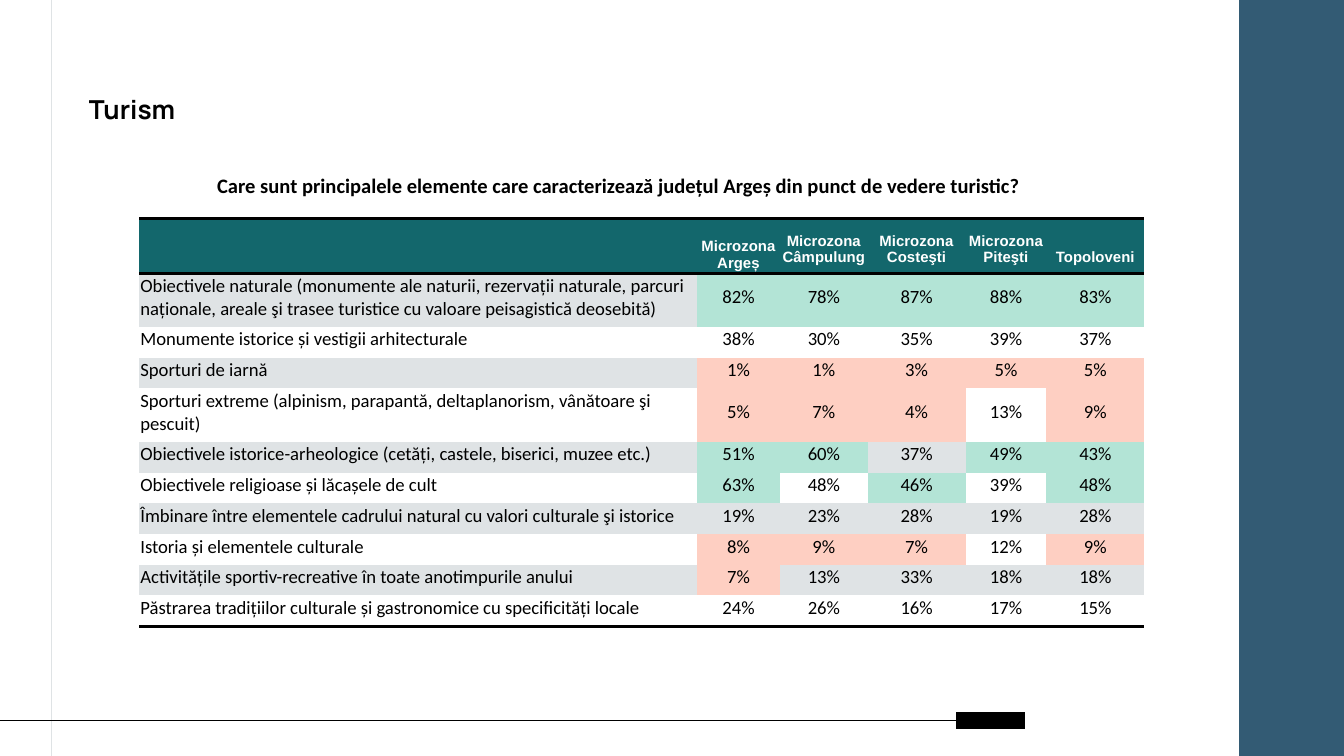
from typing import NamedTuple

from lxml.etree import SubElement
from pptx import Presentation
from pptx.dml.color import RGBColor
from pptx.enum.shapes import MSO_CONNECTOR as Connector, MSO_SHAPE as Shape
from pptx.enum.text import MSO_ANCHOR as Anchor, PP_ALIGN as Align
from pptx.oxml import parse_xml
from pptx.oxml.ns import nsdecls, qn
from pptx.util import Inches, Pt

GRID_COLUMNS, GRID_ROWS = 100, 56.25
BLACK, WHITE = "000000", "FFFFFF"
TEAL, GREY, GREEN, RED = "13676C", "DFE3E5", "B3E4D6", "FECFC2"
NO_STYLE = "{2D5ABB26-0587-4C30-8999-92F81FD0307C}"
LOW_LIMIT = 10


class Area(NamedTuple):
    left: float
    top: float
    width: float
    height: float


class Zone(NamedTuple):
    name: str
    columns: float
    high_limit: int
    bottom_inset: float = 0.55


class Answer(NamedTuple):
    label: str
    percents: tuple[int, ...]
    rows: float = 2.28


class Rule(NamedTuple):
    start: tuple[float, float]
    end: tuple[float, float]
    color: str
    width: float = 0.75


LABEL_COLUMNS, HEADER_ROWS = 41.5, 4.1
ZONES = [
    Zone("Microzona Argeș", 6.2, 50, bottom_inset=0.15),
    Zone("Microzona Câmpulung", 6.5, 50),
    Zone("Microzona Costeşti", 7.3, 40),
    Zone("Microzona Piteşti", 6, 40),
    Zone("Topoloveni", 7.3, 40),
]
ANSWERS = [
    Answer("Obiectivele naturale (monumente ale naturii, rezervații naturale, parcuri naționale, "
           "areale şi trasee turistice cu valoare peisagistică deosebită)", (82, 78, 87, 88, 83), 3.9),
    Answer("Monumente istorice și vestigii arhitecturale", (38, 30, 35, 39, 37)),
    Answer("Sporturi de iarnă", (1, 1, 3, 5, 5)),
    Answer("Sporturi extreme (alpinism, parapantă, deltaplanorism, vânătoare şi pescuit)",
           (5, 7, 4, 13, 9), 3.9),
    Answer("Obiectivele istorice-arheologice (cetăți, castele, biserici, muzee etc.)", (51, 60, 37, 49, 43)),
    Answer("Obiectivele religioase și lăcașele de cult", (63, 48, 46, 39, 48)),
    Answer("Îmbinare între elementele cadrului natural cu valori culturale şi istorice", (19, 23, 28, 19, 28)),
    Answer("Istoria și elementele culturale", (8, 9, 7, 12, 9)),
    Answer("Activitățile sportiv-recreative în toate anotimpurile anului", (7, 13, 33, 18, 18)),
    Answer("Păstrarea tradițiilor culturale și gastronomice cu specificități locale", (24, 26, 16, 17, 15)),
]
RULES = [
    Rule((3.83, -0.4), (3.83, 56.6), GREY),
    Rule((76.25, 53.6), (71.15, 53.6), BLACK, 9),
    Rule((71.15, 53.6), (-0.9, 53.6), BLACK),
]


def grid(cells: float) -> int:
    """Turn a number of grid cells into a slide length."""
    return Inches(cells / 10)


def rgb(color: str) -> RGBColor:
    """Turn a hex string into a colour."""
    return RGBColor.from_string(color)


def write(frame, text: str, *, size: float, font: str = "Calibri", color: str = BLACK,
          bold: bool = False, align=Align.LEFT) -> None:
    """Put one formatted paragraph into a text frame."""
    para = frame.paragraphs[0]
    para.alignment = align
    span = para.add_run()
    span.text = text
    span.font.size, span.font.name, span.font.bold = Pt(size), font, bold
    span.font.color.rgb = rgb(color)


def add_text(page, area: Area, text: str, inset: float = 0.5, **style) -> None:
    """Add a wrapping text box with equal top and bottom insets."""
    box = page.shapes.add_textbox(*map(grid, area))
    frame = box.text_frame
    frame.word_wrap = True
    frame.margin_top = frame.margin_bottom = grid(inset)
    write(frame, text, **style)


def add_rule(page, rule: Rule) -> None:
    """Draw a straight line without a shadow."""
    line = page.shapes.add_connector(Connector.STRAIGHT, *map(grid, rule.start + rule.end))
    line.line.color.rgb = rgb(rule.color)
    line.line.width = Pt(rule.width)
    SubElement(line.element.spPr, qn("a:effectLst"))


def add_band(page, area: Area, color: str) -> None:
    """Draw a plain filled rectangle."""
    band = page.shapes.add_shape(Shape.RECTANGLE, *map(grid, area))
    band.shadow.inherit = False
    band.fill.solid()
    band.fill.fore_color.rgb = rgb(color)
    band.line.fill.background()


def fill_cell(cell, text: str, *, fill: str, anchor=Anchor.MIDDLE, bottom: float = 0.5,
              borders: tuple[str, ...] = (), **style) -> None:
    """Format one table cell, with borders on the named sides."""
    cell.fill.solid()
    cell.fill.fore_color.rgb = rgb(fill)
    cell.vertical_anchor = anchor
    cell.margin_left = cell.margin_right = cell.margin_top = grid(0.1)
    cell.margin_bottom = grid(bottom)
    if text:
        write(cell.text_frame, text, **style)
    for index, side in enumerate(borders):
        cell._tc.get_or_add_tcPr().insert(index, parse_xml(
            f'<a:{side} {nsdecls("a")} w="{Pt(2)}"><a:solidFill><a:srgbClr val="{BLACK}"/>'
            f'</a:solidFill></a:{side}>'))


def tone(percent: int, zone: Zone, stripe: str) -> str:
    """Choose the fill that marks a low, high or ordinary share."""
    if percent < LOW_LIMIT:
        return RED
    return GREEN if percent >= zone.high_limit else stripe


def add_answers(page, left: float, top: float) -> None:
    """Add the table of answers by zone."""
    widths = [LABEL_COLUMNS, *(zone.columns for zone in ZONES)]
    heights = [HEADER_ROWS, *(answer.rows for answer in ANSWERS)]
    area = Area(left, top, sum(widths), sum(heights))
    holder = page.shapes.add_table(len(heights), len(widths), *map(grid, area))
    table = holder.table
    table.first_row = table.horz_banding = False
    for style in holder.element.iter(qn("a:tableStyleId")):
        style.text = NO_STYLE
    for column, width in zip(table.columns, widths):
        column.width = grid(width)
    for row, height in zip(table.rows, heights):
        row.height = grid(height)

    fill_cell(table.cell(0, 0), "", fill=TEAL, borders=("lnT", "lnB"))
    for column, zone in enumerate(ZONES, 1):
        fill_cell(table.cell(0, column), zone.name, fill=TEAL, anchor=Anchor.BOTTOM,
                  bottom=zone.bottom_inset, borders=("lnT", "lnB"), size=8, font="Arial",
                  color=WHITE, bold=True, align=Align.CENTER)
    for row, answer in enumerate(ANSWERS, 1):
        stripe = GREY if row % 2 else WHITE
        borders = ("lnB",) if row == len(ANSWERS) else ()
        fill_cell(table.cell(row, 0), answer.label, fill=stripe, anchor=Anchor.BOTTOM,
                  borders=borders, size=10)
        for column, (zone, percent) in enumerate(zip(ZONES, answer.percents), 1):
            fill_cell(table.cell(row, column), f"{percent}%", fill=tone(percent, zone, stripe),
                      borders=borders, size=10, align=Align.CENTER)


def main() -> None:
    """Build and save the deck."""
    deck = Presentation()
    deck.slide_width, deck.slide_height = grid(GRID_COLUMNS), grid(GRID_ROWS)
    page = deck.slides.add_slide(deck.slide_layouts[6])
    add_band(page, Area(92.2, 0, 7.8, GRID_ROWS), "335B74")
    for rule in RULES:
        add_rule(page, rule)
    add_answers(page, 10.35, 16.25)
    add_text(page, Area(13.85, 12.35, 64.4, 2.9),
             "Care sunt principalele elemente care caracterizează județul Argeș din punct de vedere turistic?",
             size=11, bold=True, align=Align.CENTER)
    add_text(page, Area(5.63, 5.95, 84.3, 4), "Turism", inset=1, size=14, font="Manrope", bold=True)
    deck.save("out.pptx")


if __name__ == "__main__":
    main()
